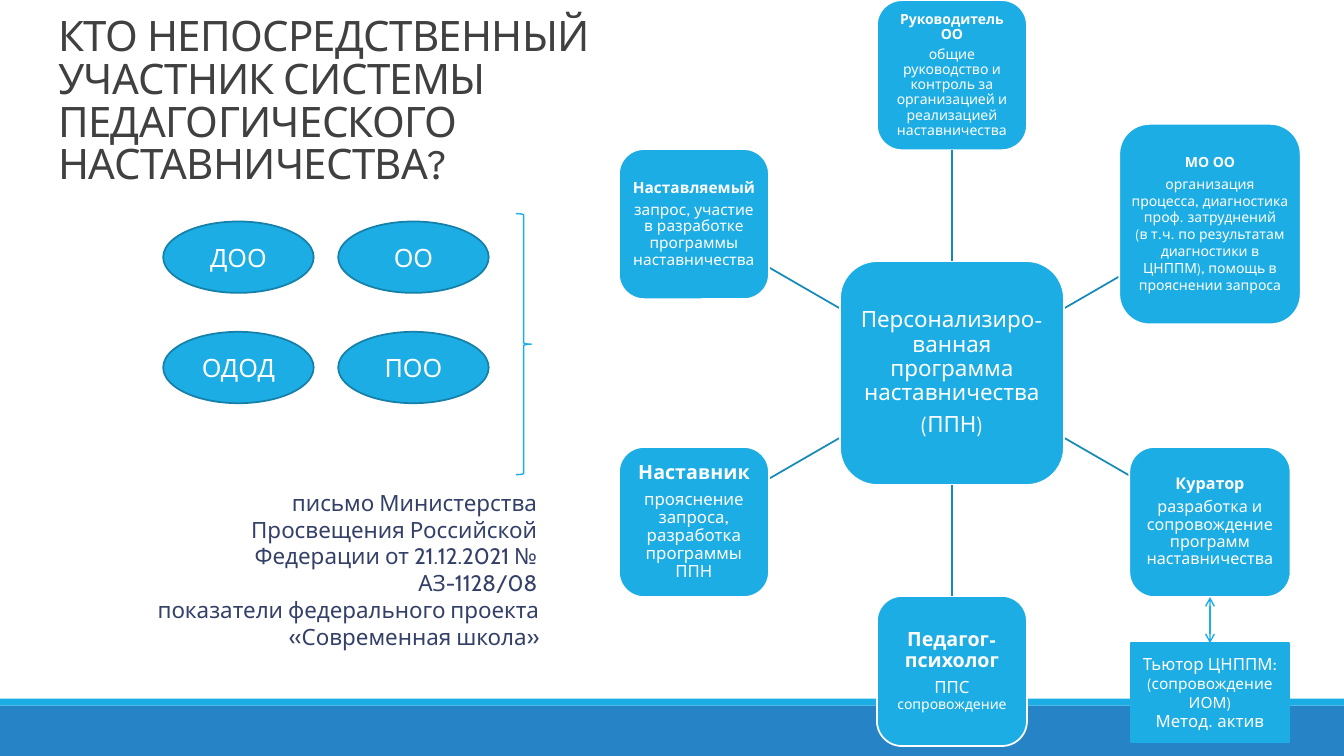
import math

import pptx
import pptx.dml.color
import pptx.enum.shapes
import pptx.enum.text
import pptx.oxml.ns
import pptx.oxml.xmlchemy
import pptx.util

Pt = pptx.util.Pt
SHAPE = pptx.enum.shapes.MSO_SHAPE
ALIGN = pptx.enum.text.PP_ALIGN
ANCHOR = pptx.enum.text.MSO_ANCHOR

COLORS = {
    "sky": "1CADE4", "blue": "2683C6", "spoke": "168BB7", "rim": "1580A9",
    "white": "FFFFFF", "title": "404040", "note": "344068",
}
HEADING_FONT, NOTE_FONT = "League Spartan", "Cabin"
TOP, BOTTOM = 0, 2  # connection sites of a rectangle

# Each paragraph is a list of (text, size, bold)
HUB_TEXT = [[("Персонализиро-ванная программа наставничества", 16, False)],
            [("(ППН)", 16, False)]]

# Angle on the wheel, width, height, paragraphs
ROLES = {
    "head": (90, 107.2, 107.2, [
        [("Руководитель ОО", 10, True)],
        [("общие руководство и контроль за организацией и реализацией "
          "наставничества", 10, False)]]),
    "council": (30, 129.6, 143.2, [
        [("МО ОО", 10, True)],
        [("организация процесса, диагностика проф. затруднений", 10, False)],
        [("(в т.ч. по результатам диагностики в ЦНППМ), помощь в прояснении "
          "запроса", 10, False)]]),
    "curator": (-30, 115.2, 107.2, [
        [("Куратор", 11.5, True)],
        [("разработка и сопровождение программ наставничества", 11.5, False)]]),
    "psychologist": (-90, 107.2, 107.2, [
        [("Педагог-психолог", 14, True)],
        [("ППС ", 12, False), ("сопровождение", 10, False)]]),
    "mentor": (-150, 107.2, 107.2, [
        [("Наставник", 14, True)],
        [("прояснение запроса, разработка программы ППН", 12, False)]]),
    "mentee": (150, 107.2, 107.2, [
        [("Наставляемый", 11, True)],
        [("запрос, участие в разработке программы наставничества", 11, False)]]),
}


def rgb(name):
    return pptx.dml.color.RGBColor.from_string(COLORS[name])


def write(box, paragraphs, color="white", font=HEADING_FONT, align=ALIGN.CENTER,
          anchor=ANCHOR.MIDDLE, inset=None):
    frame = box.text_frame
    frame.word_wrap = True
    frame.vertical_anchor = anchor
    if inset is not None:
        frame.margin_left = frame.margin_right = Pt(inset)
        frame.margin_top = frame.margin_bottom = Pt(inset)
    for number, spans in enumerate(paragraphs):
        para = frame.paragraphs[0] if number == 0 else frame.add_paragraph()
        para.alignment = align
        for text, size, bold in spans:
            span = para.add_run()
            span.text = text
            span.font.size = Pt(size)
            span.font.bold = bold
            span.font.name = font
            span.font.color.rgb = rgb(color)
    return frame


def add_shape(page, kind, left, top, width, height, fill="sky", line=None, weight=1.25):
    shape = page.shapes.add_shape(kind, Pt(left), Pt(top), Pt(width), Pt(height))
    shape.shadow.inherit = False
    if fill:
        shape.fill.solid()
        shape.fill.fore_color.rgb = rgb(fill)
    else:
        shape.fill.background()
    if line:
        shape.line.color.rgb = rgb(line)
        shape.line.width = Pt(weight)
    else:
        shape.line.fill.background()
    return shape


def add_line(page, start, end, color, weight):
    line = page.shapes.add_connector(pptx.enum.shapes.MSO_CONNECTOR.STRAIGHT,
                                     *(Pt(value) for value in (*start, *end)))
    line.line.color.rgb = rgb(color)
    line.line.width = Pt(weight)
    line._element.spPr.append(pptx.oxml.xmlchemy.OxmlElement("a:effectLst"))
    return line


def add_note(page, left, top, width, height, text, **style):
    box = page.shapes.add_textbox(Pt(left), Pt(top), Pt(width), Pt(height))
    return write(box, [[text]], **style)


def draw_footer(page, left, top, width, height):
    strip = 5
    add_shape(page, SHAPE.RECTANGLE, left, top + strip, width, height - strip, "blue")
    add_shape(page, SHAPE.RECTANGLE, left, top, width, strip)


def draw_title(page, left, top, width, height):
    frame = add_note(
        page, left, top, width, height,
        ("КТО НЕПОСРЕДСТВЕННЫЙ УЧАСТНИК СИСТЕМЫ ПЕДАГОГИЧЕСКОГО НАСТАВНИЧЕСТВА?",
         30, False),
        color="title", align=ALIGN.LEFT, anchor=ANCHOR.BOTTOM)
    para = frame.paragraphs[0]
    para.line_spacing = 0.85
    para.runs[0].font._element.set("spc", "-50")


def draw_organisations(page, left, top, width, height):
    oval_width, oval_height, step_x, step_y = 107.5, 51, 125, 78.8
    for number, name in enumerate(["ДОО", "ОО", "ОДОД", "ПОО"]):
        row, column = divmod(number, 2)
        oval = add_shape(page, SHAPE.OVAL, left + column * step_x,
                         top + 5.6 + row * step_y, oval_width, oval_height, line="rim")
        write(oval, [[(name, 18, False)]])
    brace = 11
    add_shape(page, SHAPE.RIGHT_BRACE, left + width - brace, top, brace, height,
              fill=None, line="sky", weight=1)


def draw_sources(page, left, top, width, height):
    style = {"color": "note", "font": NOTE_FONT, "align": ALIGN.RIGHT,
             "anchor": ANCHOR.TOP}
    split = 77
    add_note(page, left + 65, top, width - 66.5, split + 8,
             ("письмо Министерства Просвещения Российской Федерации "
              "от 21.12.2021 № АЗ-1128/08", 16, False), **style)
    add_note(page, left, top + split, width, height - split,
             ("показатели федерального проекта «Современная школа»", 16, False), **style)


def add_role(page, center_x, center_y, width, height, paragraphs, inset):
    box = add_shape(page, SHAPE.ROUNDED_RECTANGLE, center_x - width / 2,
                    center_y - height / 2, width, height, line="white")
    return box, write(box, paragraphs, inset=inset)


def tighten(para):
    para.line_spacing = 0.9
    para.space_after = Pt(0.35 * para.runs[0].font.size.pt)


def draw_wheel(page, left, top, width, height):
    center_x, center_y = left + width / 2, top + height / 2
    hub_half, radius = 80, 212.8

    # Slanted spokes, from the hub's side to the facing side of each role
    for angle, role_width, _, _ in ROLES.values():
        cosine = math.cos(math.radians(angle))
        if abs(angle) != 90:
            side = math.copysign(1, cosine)
            slope = side * math.tan(math.radians(angle))
            reaches = hub_half, radius * abs(cosine) - role_width / 2
            ends = [(center_x + side * reach, center_y - slope * reach)
                    for reach in reaches]
            add_line(page, *ends, "spoke", 1.25)

    # Hub and roles
    hub, frame = add_role(page, center_x, center_y, 2 * hub_half, 2 * hub_half,
                          HUB_TEXT, 3)
    for para in frame.paragraphs:
        tighten(para)
    boxes = {}
    for name, (angle, role_width, role_height, paragraphs) in ROLES.items():
        turn = math.radians(angle)
        boxes[name], frame = add_role(
            page, center_x + radius * math.cos(turn), center_y - radius * math.sin(turn),
            role_width, role_height, paragraphs, 2.4)
        for para in frame.paragraphs[:1 if name == "council" else None]:
            tighten(para)

    # Upright spokes
    for name, hub_site, role_site in [("head", TOP, BOTTOM), ("psychologist", BOTTOM, TOP)]:
        spoke = add_line(page, (0, 0), (0, 0), "spoke", 1.25)
        spoke.begin_connect(hub, hub_site)
        spoke.end_connect(boxes[name], role_site)
    return boxes["curator"]


def draw_tutor(page, left, top, width, height, curator):
    tutor = add_shape(page, SHAPE.RECTANGLE, left, top, width, height, line="sky")
    write(tutor, [[("Тьютор ЦНППМ: ", 12, False), ("(сопровождение ИОМ)", 11, False)],
                  [("Метод. актив", 12, False)]])
    arrow = add_line(page, (0, 0), (0, 0), "sky", 1)
    arrow.begin_connect(curator, BOTTOM)
    arrow.end_connect(tutor, TOP)
    outline = arrow._element.spPr.find(pptx.oxml.ns.qn("a:ln"))
    for tag in ("a:headEnd", "a:tailEnd"):
        tip = pptx.oxml.xmlchemy.OxmlElement(tag)
        tip.set("type", "arrow")
        outline.append(tip)


def main():
    deck = pptx.Presentation()
    deck.slide_width, deck.slide_height = Pt(960), Pt(540)
    page = deck.slides.add_slide(deck.slide_layouts[6])
    draw_footer(page, 0, 499, 960, 41)
    draw_title(page, 34.6, 0, 449.3, 138.2)
    draw_organisations(page, 116.6, 152.6, 263, 186.5)
    draw_sources(page, 63.4, 345.6, 329, 123)
    curator = draw_wheel(page, 442, 0, 476, 533)
    draw_tutor(page, 807.8, 459.4, 113, 70.6, curator)
    deck.save("out.pptx")


if __name__ == "__main__":
    main()
